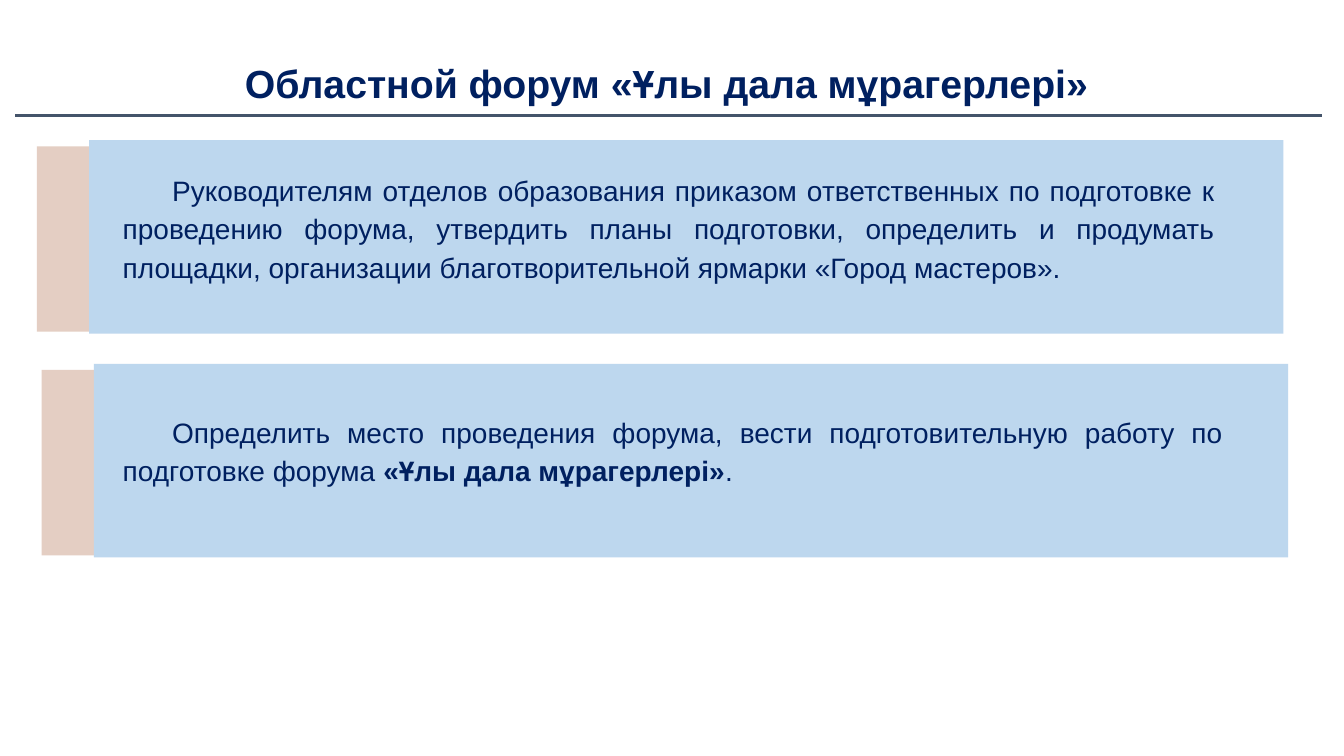
from dataclasses import dataclass

from lxml import etree
from pptx import Presentation
from pptx.dml.color import RGBColor
from pptx.enum.shapes import MSO_CONNECTOR, MSO_SHAPE
from pptx.enum.text import MSO_ANCHOR, PP_ALIGN
from pptx.oxml.ns import qn
from pptx.util import Pt


@dataclass(frozen=True)
class Theme:
    font: str = "Arial"
    ink: RGBColor = RGBColor(0x00, 0x20, 0x60)
    rule: RGBColor = RGBColor(0x44, 0x54, 0x6A)
    back: RGBColor = RGBColor(0xE4, 0xCE, 0xC3)
    panel: RGBColor = RGBColor(0xBD, 0xD7, 0xEE)
    title_size: int = 28
    body_size: int = 20


theme = Theme()


def add_text(page, bounds, spans, size, anchor, para_format, indent=0):
    """Add a one-paragraph text box; spans are (text, bold) pairs."""
    box = page.shapes.add_textbox(*[Pt(value) for value in bounds])
    frame = box.text_frame
    frame.word_wrap = True
    frame.vertical_anchor = anchor
    para = frame.paragraphs[0]
    for name, value in para_format.items():
        setattr(para, name, value)
    if indent:
        para._p.get_or_add_pPr().set("indent", str(Pt(indent)))
    for text, bold in spans:
        span = para.add_run()
        span.text = text
        font_format = {"name": theme.font, "size": Pt(size), "bold": bold}
        for name, value in font_format.items():
            setattr(span.font, name, value)
        span.font.color.rgb = theme.ink


deck = Presentation()
deck.slide_width, deck.slide_height = Pt(960), Pt(540)
page = deck.slides.add_slide(deck.slide_layouts[6])

# Title and the rule below it
add_text(page, (62, 28.8, 828, 65.5),
         [("Областной форум «Ұлы дала мұрагерлері»", True)],
         theme.title_size, MSO_ANCHOR.MIDDLE,
         {"alignment": PP_ALIGN.CENTER, "line_spacing": 0.9})
rule = page.shapes.add_connector(
    MSO_CONNECTOR.STRAIGHT, Pt(10.8), Pt(82.8), Pt(944.6), Pt(82.8))
rule.line.color.rgb = theme.rule
rule.line.width = Pt(2.25)
etree.SubElement(rule._element.spPr, qn("a:effectLst"))

# Task cards: panel corner, text bounds, spans
cards = [
    (63.6, 100.1, (80.6, 116.6, 794.2, 90.7), [
        ("Руководителям отделов образования приказом ответственных по "
         "подготовке к проведению форума, утвердить планы подготовки, "
         "определить и продумать площадки, организации благотворительной "
         "ярмарки «Город мастеров».", False)]),
    (67, 259.9, (80.6, 289.4, 800, 61.2), [
        ("Определить место проведения форума, вести подготовительную "
         "работу по подготовке форума ", False),
        ("«Ұлы дала мұрагерлері»", True),
        (".", False)]),
]
for left, top, bounds, spans in cards:
    # Back plate peeks out to the left of the panel
    card = page.shapes.add_group_shape()
    plates = [(left - 37.2, top + 4.4, 132.5, theme.back),
              (left, top, 138.2, theme.panel)]
    for plate_left, plate_top, height, color in plates:
        plate = card.shapes.add_shape(
            MSO_SHAPE.RECTANGLE,
            Pt(plate_left), Pt(plate_top), Pt(853.2), Pt(height))
        plate.shadow.inherit = False
        plate.fill.solid()
        plate.fill.fore_color.rgb = color
        plate.line.fill.background()
    add_text(page, bounds, spans, theme.body_size, MSO_ANCHOR.TOP,
             {"alignment": PP_ALIGN.JUSTIFY, "line_spacing": 1.15}, indent=35.3)

deck.save("out.pptx")
